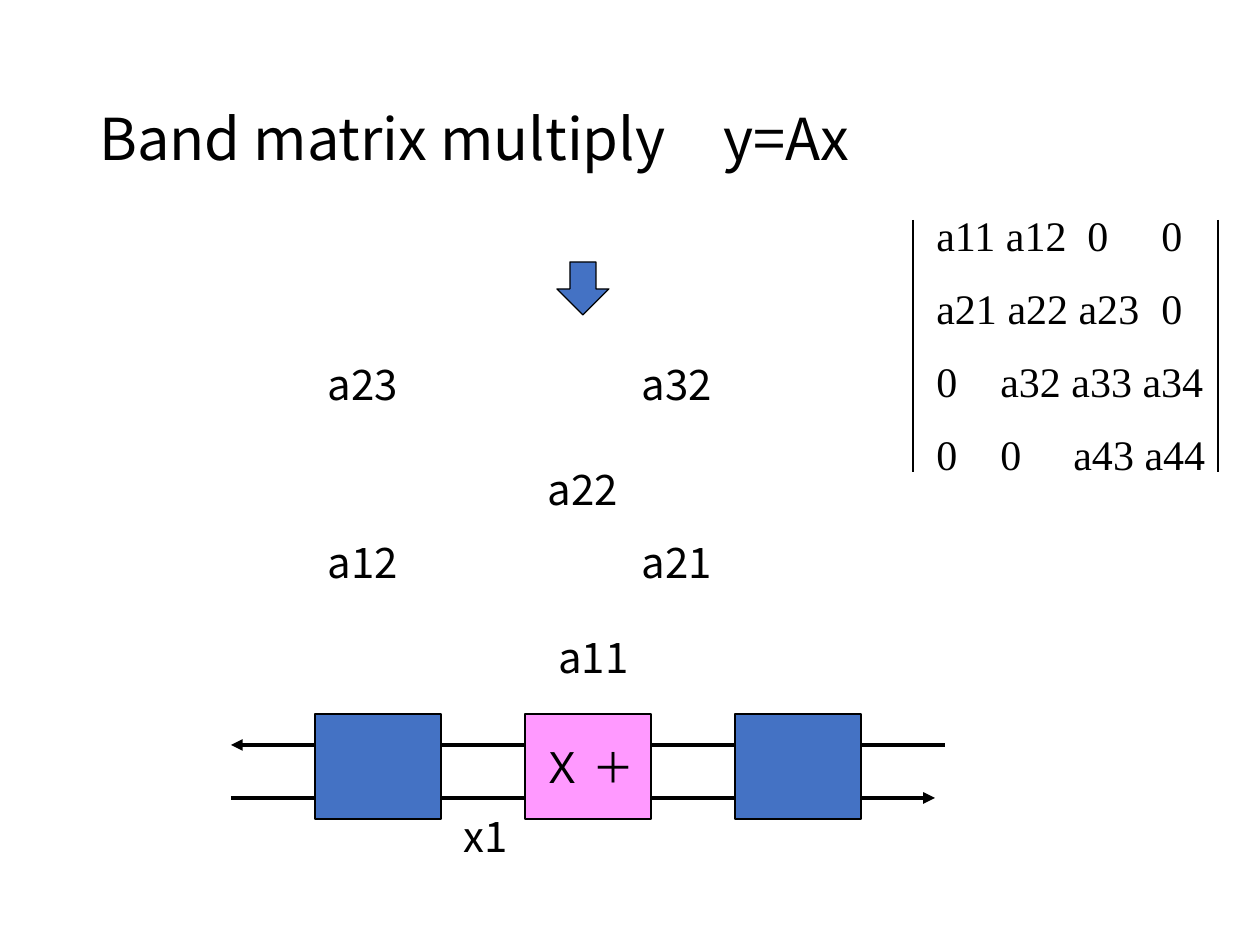
from lxml import etree
from pptx import Presentation
from pptx import util as u
from pptx.dml.color import RGBColor
from pptx.enum import shapes, text
from pptx.oxml.ns import qn

SCALE = 914400 // 126
SANS, SERIF = "Noto Sans CJK JP", "Times New Roman"
BLACK, BLUE, PINK = "000000", "4472C4", "FF99FF"

CELL_W, CELL_H, CELL_TOP = 126, 105, 714
CELL_LEFTS = [315, 525, 735]

# Entries waiting above the array: text, left, top
LABELS = [
    ("a11", 546, 625), ("x1", 451, 804), ("a22", 535, 457),
    ("a12", 315, 530), ("a21", 629, 530),
    ("a23", 315, 352), ("a32", 629, 352),
]

# Matrix rows: text, tab stops
MATRIX_ROWS = [
    ("a11 a12\t0\t0", [151, 225]),
    ("a21 a22 a23\t0", [225]),
    ("0\ta32 a33 a34", [64]),
    ("0\t0\ta43 a44", [64, 137]),
]


def px(length):
    return u.Emu(length * SCALE)


def color(value):
    return RGBColor.from_string(value)


def add_run(paragraph, words, size, font):
    run = paragraph.add_run()
    run.text = words
    run.font.size = u.Pt(size)
    run.font.name = font
    run.font.color.rgb = color(BLACK)
    east_asian = etree.SubElement(run.font._element, qn("a:ea"))
    east_asian.set("typeface", SANS)


def add_text_box(parent, left, top, width, height):
    frame = parent.add_textbox(px(left), px(top), px(width), px(height)).text_frame
    frame.word_wrap = True
    return frame


def add_title(parent, words):
    frame = add_text_box(parent, 87, 50, 1086, 183)
    frame.vertical_anchor = text.MSO_ANCHOR.MIDDLE
    frame.paragraphs[0].line_spacing = 0.9
    add_run(frame.paragraphs[0], words, 33, SANS)


def add_label(parent, words, left, top):
    frame = add_text_box(parent, left, top, 105, 74)
    add_run(frame.paragraphs[0], words, 24, SANS)


def add_line(parent, start, end, width, arrow=False):
    line = parent.add_connector(
        shapes.MSO_CONNECTOR.STRAIGHT, *map(px, start), *map(px, end))
    line.line.color.rgb = color(BLACK)
    line.line.width = u.Pt(width)
    if arrow:
        tail = etree.SubElement(line.line._get_or_add_ln(), qn("a:tailEnd"))
        tail.set("type", "triangle")
    etree.SubElement(line._element.spPr, qn("a:effectLst"))


def add_filled(parent, kind, left, top, width, height, fill):
    shape = parent.add_shape(kind, px(left), px(top), px(width), px(height))
    shape.shadow.inherit = False
    shape.fill.solid()
    shape.fill.fore_color.rgb = color(fill)
    shape.line.color.rgb = color(BLACK)
    shape.line.width = u.Pt(0.75)
    return shape


def add_cell(parent, left, fill, words=None):
    """Add one processing cell of the array."""
    cell = add_filled(parent, shapes.MSO_SHAPE.RECTANGLE,
                      left, CELL_TOP, CELL_W, CELL_H, fill)
    if words:
        frame = cell.text_frame
        frame.word_wrap = False
        frame.vertical_anchor = text.MSO_ANCHOR.MIDDLE
        frame.paragraphs[0].alignment = text.PP_ALIGN.CENTER
        add_run(frame.paragraphs[0], words, 24, SERIF)


def add_tab_stops(paragraph, positions):
    tabs = etree.SubElement(paragraph._p.get_or_add_pPr(), qn("a:tabLst"))
    for position in positions:
        tab = etree.SubElement(tabs, qn("a:tab"))
        tab.set("pos", str(px(position)))
        tab.set("algn", "l")


def add_matrix(parent):
    matrix = parent.add_group_shape().shapes
    frame = add_text_box(matrix, 924, 203, 294, 275)
    for index, (words, stops) in enumerate(MATRIX_ROWS):
        row = frame.add_paragraph() if index else frame.paragraphs[0]
        if index:
            row.space_before = u.Pt(13)
        add_tab_stops(row, stops)
        add_run(row, words, 24, SERIF)
    for bar_x in (913, 1218):
        add_line(matrix, (bar_x, 220), (bar_x, 472), 0.75)


def main():
    deck = Presentation()
    deck.slide_width, deck.slide_height = px(1260), px(945)
    canvas = deck.slides.add_slide(deck.slide_layouts[6]).shapes

    add_title(canvas, "Band matrix multiply\u3000y=Ax".replace("\u3000", "　"))
    add_line(canvas, (945, 745), (231, 745), 2.25, arrow=True)
    add_line(canvas, (231, 798), (935, 798), 2.25, arrow=True)

    left_cell, middle_cell, right_cell = CELL_LEFTS
    add_cell(canvas, middle_cell, PINK, "Ｘ ＋")
    add_cell(canvas, right_cell, BLUE)
    add_cell(canvas, left_cell, BLUE)

    for words, left, top in LABELS:
        add_label(canvas, words, left, top)
    add_matrix(canvas)
    add_filled(canvas, shapes.MSO_SHAPE.DOWN_ARROW, 557, 262, 52, 53, BLUE)

    deck.save("out.pptx")


if __name__ == "__main__":
    main()
